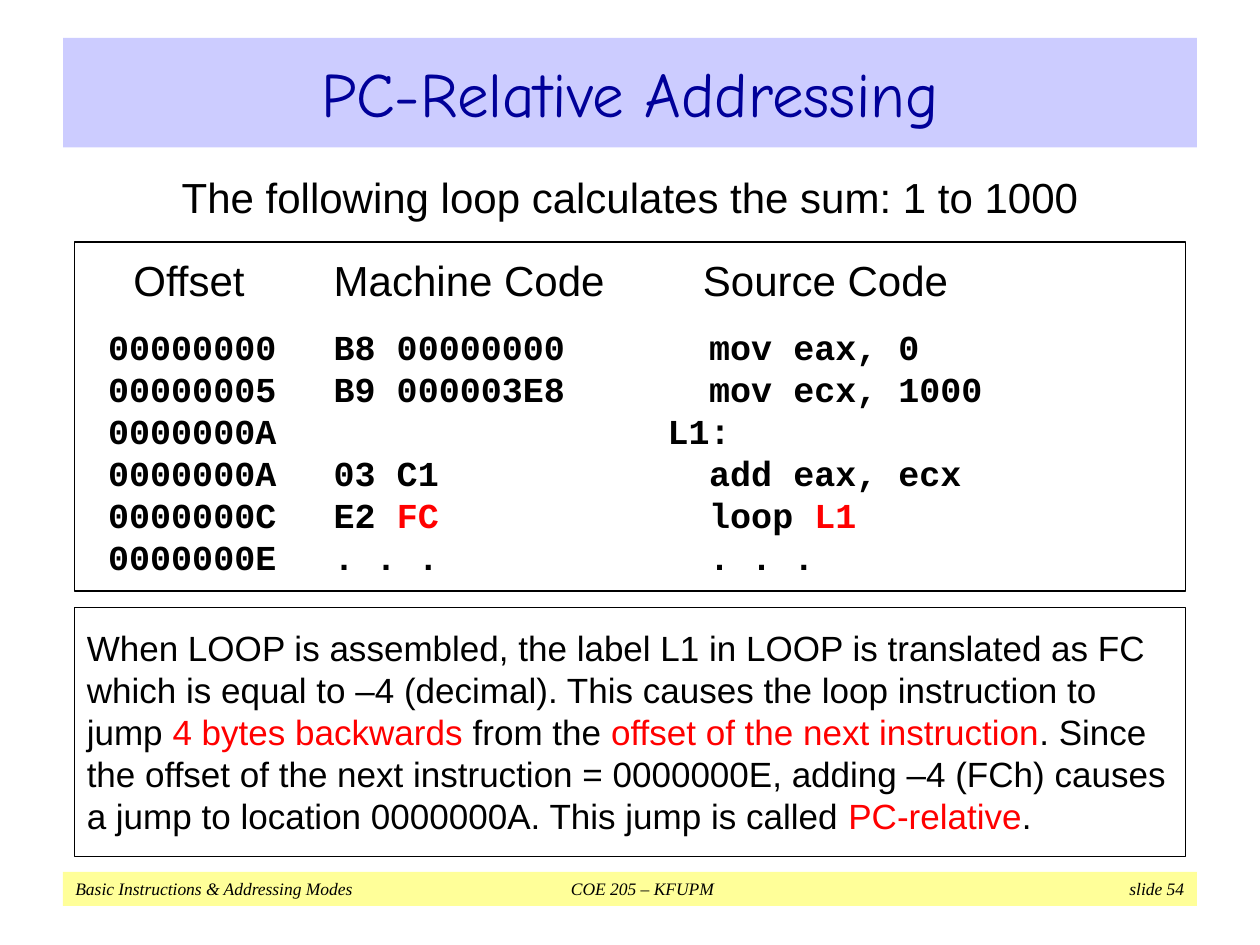
"""Build the PC-Relative Addressing slide."""
import pptx
import pptx.dml.color
import pptx.enum.shapes
import pptx.enum.text
import pptx.oxml.ns
import pptx.util
from lxml import etree
from pptx.util import Inches

ALIGN = pptx.enum.text.PP_ALIGN
ANCHOR = pptx.enum.text.MSO_ANCHOR
BLACK, RED, NAVY = "000000", "FF0000", "000099"


def rgb(value):
    """Turn a hex string into a colour."""
    return pptx.dml.color.RGBColor.from_string(value)


def write(paragraph, text, font="Arial", size=20, color=BLACK, bold=False,
          italic=False, align=ALIGN.LEFT, before=0, pitch=1.0, tabs=()):
    """Write text into a paragraph; parts between asterisks turn red."""
    paragraph.alignment = align
    paragraph.line_spacing = pitch
    paragraph.space_before = pptx.util.Pt(before)
    for index, part in enumerate(text.split("*")):
        if part:
            run = paragraph.add_run()
            run.text = part
            run.font.name = font
            run.font.size = pptx.util.Pt(size)
            run.font.bold = bold
            run.font.italic = italic
            run.font.color.rgb = rgb(RED if index % 2 else color)
    if tabs:
        properties = paragraph._p.get_or_add_pPr()
        stops = etree.SubElement(properties, pptx.oxml.ns.qn("a:tabLst"))
        for position, kind in tabs:
            etree.SubElement(stops, pptx.oxml.ns.qn("a:tab"),
                             pos=str(Inches(position)), algn=kind)


deck = pptx.Presentation()
deck.slide_width, deck.slide_height = Inches(10), Inches(7.5)
slide = deck.slides.add_slide(deck.slide_layouts[5])

title = slide.shapes.title
title.left, title.top = Inches(0.5), Inches(0.3)
title.width, title.height = Inches(9), Inches(0.87)
title.fill.solid()
title.fill.fore_color.rgb = rgb("CCCCFF")
title.text_frame.vertical_anchor = ANCHOR.MIDDLE
write(title.text_frame.paragraphs[0], "PC-Relative Addressing",
      font="Comic Neue", size=36, color=NAVY, align=ALIGN.CENTER)

frames = []
for left, top, width, height, inset, fill, line in (
        (0.5, 6.92, 9, 0.27, 0.05, "FFFF99", None),
        (0.53, 1.21, 8.94, 0.7, 0.15, None, None),
        (0.59, 4.82, 8.82, 1.98, 0.15, None, BLACK),
        (0.59, 1.92, 8.82, 2.77, 0.1, None, BLACK)):
    box = slide.shapes.add_shape(
        pptx.enum.shapes.MSO_SHAPE.RECTANGLE,
        Inches(left), Inches(top), Inches(width), Inches(height))
    box.shadow.inherit = False
    if fill:
        box.fill.solid()
        box.fill.fore_color.rgb = rgb(fill)
    else:
        box.fill.background()
    if line:
        box.line.color.rgb = rgb(line)
        box.line.width = pptx.util.Pt(0.75)
    else:
        box.line.fill.background()
    frame = box.text_frame
    frame.word_wrap = True
    frame.vertical_anchor = ANCHOR.TOP
    frame.margin_left = frame.margin_right = Inches(0.1)
    frame.margin_top = frame.margin_bottom = Inches(inset)
    frames.append(frame)
footer, intro, explanation, listing = frames

write(footer.paragraphs[0],
      "Basic Instructions & Addressing Modes\tCOE 205 – KFUPM\tslide 54",
      font="Times New Roman", size=10, italic=True,
      tabs=((4.5, "ctr"), (8.8, "r")))

write(intro.paragraphs[0], "The following loop calculates the sum: 1 to 1000",
      size=24, align=ALIGN.CENTER, pitch=pptx.util.Pt(28.8))

write(explanation.paragraphs[0],
      "When LOOP is assembled, the label L1 in LOOP is translated as FC which "
      "is equal to –4 (decimal). This causes the loop instruction to jump "
      "*4 bytes backwards* from the *offset of the next instruction*. Since "
      "the offset of the next instruction = 0000000E, adding –4 (FCh) causes "
      "a jump to location 0000000A. This jump is called *PC-relative*.",
      pitch=pptx.util.Pt(24))

write(listing.paragraphs[0], "\tOffset\tMachine Code\tSource Code", size=24,
      pitch=pptx.util.Pt(28.8), tabs=((0.37, "l"), (1.96, "l"), (4.89, "l")))

instructions = (
    ("00000000", "B8 00000000", "mov eax, 0"),
    ("00000005", "B9 000003E8", "mov ecx, 1000"),
    ("0000000A", "", "L1:"),
    ("0000000A", "03 C1", "add eax, ecx"),
    ("0000000C", "E2 *FC*", "loop *L1*"),
    ("0000000E", ". . .", ". . ."),
)
for row, (offset, machine, source) in enumerate(instructions):
    source_tab = 4.61 if source.endswith(":") else 4.94
    write(listing.add_paragraph(), f"\t{offset}\t{machine}\t{source}",
          font="Courier New", bold=True, before=0 if row else 12,
          pitch=pptx.util.Pt(24),
          tabs=((0.17, "l"), (1.96, "l"), (source_tab, "l")))

deck.save("out.pptx")
